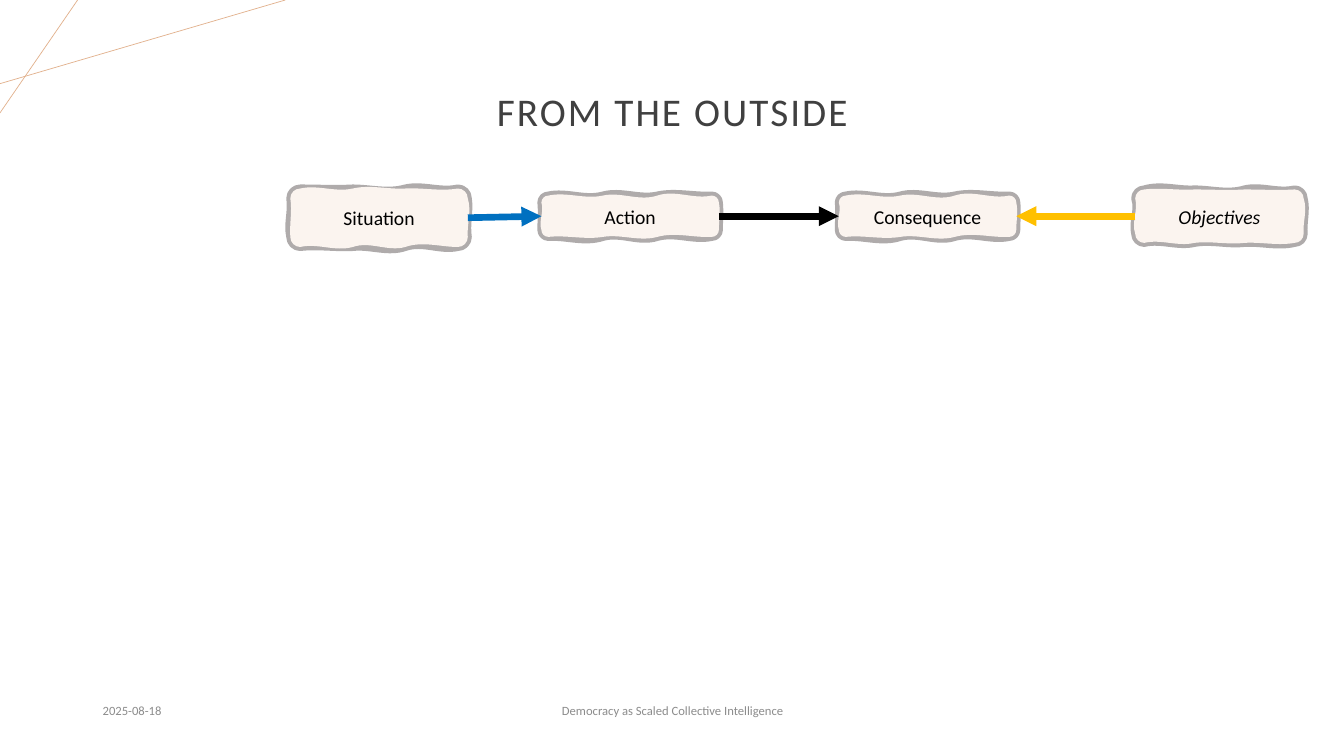
from pptx import Presentation
from pptx import util as u
from pptx.dml.color import RGBColor
from pptx.enum import shapes, text
from pptx.oxml import ns
from lxml import etree

CREAM = RGBColor(0xFB, 0xF4, 0xEF)
STONE = RGBColor(0xAF, 0xAB, 0xAB)
PEACH = RGBColor(0xE2, 0xB1, 0x8D)
BLUE = RGBColor(0x00, 0x70, 0xC0)
GOLD = RGBColor(0xFF, 0xC0, 0x00)
BLACK = RGBColor(0, 0, 0)
DARK = RGBColor(0x40, 0x40, 0x40)
GREY = RGBColor(0x8C, 0x8C, 0x8C)
FONT = "Calibri"

# Bends of the rim and the face, in hundredths of an inch: two per curve,
# three curves along the top, one right, three along the bottom, one left
TALL = ([0, 1, 0, 5, -4, 4, 2, -2, 4, -6, 6, -2, 1, -2, -3, 2],
        [-4, 4, -4, 1, -1, 3, 4, -1, 0, -6, 5, -6, 5, -4, -1, 2])
FLAT = ([-4, 5, -5, 4, -4, 1, 1, 0, 4, -5, 6, -5, 6, -1, 0, 1],
        [-4, 4, -4, 6, -6, 4, 2, 0, 1, -5, 5, -3, 3, -2, -3, 3])
GOAL = ([-5, 1, 0, 5, -4, 4, 3, -1, 4, -1, 2, -3, 4, -4, -3, 4],
        [-2, 1, 0, 1, 0, 1, 4, -1, 3, -1, 2, -2, 4, -4, -4, 3])

# Label, box, bends, italic
STEPS = [
    ("Situation", (2.88, 1.87, 1.76, 0.58), TALL, False),
    ("Action", (5.37, 1.94, 1.76, 0.41), FLAT, False),
    ("Consequence", (8.32, 1.94, 1.76, 0.41), FLAT, False),
    ("Objectives", (11.26, 1.88, 1.67, 0.53), GOAL, True),
]


def inches(*sizes):
    return [u.Inches(s) for s in sizes]


def write(frame, words, size, color, align, italic=None):
    frame.word_wrap = True
    frame.vertical_anchor = text.MSO_ANCHOR.MIDDLE
    para = frame.paragraphs[0]
    para.alignment = align
    run = para.add_run()
    run.text = words
    run.font.name = FONT
    run.font.size = u.Pt(size)
    run.font.italic = italic
    run.font.color.rgb = color
    return para, run


def label(slide, box, *look):
    return write(slide.shapes.add_textbox(*inches(*box)).text_frame, *look)


def line(slide, start, end, color, width, arrow=False):
    link = slide.shapes.add_connector(
        shapes.MSO_CONNECTOR.STRAIGHT, *inches(*start, *end))
    link.line.color.rgb = color
    link.line.width = u.Pt(width)
    if arrow:
        etree.SubElement(link.line._get_or_add_ln(), ns.qn("a:tailEnd"),
                         type="triangle")
    etree.SubElement(link._element.spPr, ns.qn("a:effectLst"))


def curves(w, h, bends):
    """Return the start and the cubic curves of a wavy rounded box."""
    r = 0.17 * h
    third = (w - 2 * r) / 3
    stops = [r + third * i for i in range(4)]
    top = [(x, 0) for x in stops]
    base = [(x, h) for x in reversed(stops)]
    knots = [(0, r), *top, (w, r), (w, h - r), *base, (0, h - r), (0, r)]
    bend = iter(bends)
    result = []
    for (x1, y1), (x2, y2) in zip(knots, knots[1:]):
        dx, dy = x2 - x1, y2 - y1
        if dx and dy:  # rounded corner
            tip = (x1, y2) if x1 in (0, w) else (x2, y1)
            ends = [tuple(k + 0.55 * (t - k) for k, t in zip(knot, tip))
                    for knot in ((x1, y1), (x2, y2))]
        else:  # wavy side
            ends = []
            for part in (1 / 3, 2 / 3):
                off = next(bend) / 100
                ends.append((x1 + dx * part + (off if dy else 0),
                             y1 + dy * part + (off if dx else 0)))
        result.append((*ends, (x2, y2)))
    return knots[0], result


def add_point(parent, point):
    x, y = inches(*point)
    etree.SubElement(parent, ns.qn("a:pt"), x=str(x), y=str(y))


def wavy(slide, box, bends, words, italic):
    left, top, w, h = box
    pen = slide.shapes.build_freeform(*inches(left, top), scale=1.0)
    pen.add_line_segments([inches(left + w, top), inches(left + w, top + h),
                           inches(left, top + h)])
    shape = pen.convert_to_shape()
    shape.shadow.inherit = False
    shape.fill.solid()
    shape.fill.fore_color.rgb = CREAM
    shape.line.color.rgb = STONE
    shape.line.width = u.Pt(5.75)

    # A stroked rim below a filled face
    paths = shape._element.spPr.find(".//" + ns.qn("a:pathLst"))
    paths.clear()
    for wave, off in zip(bends, ({"fill": "none"}, {"stroke": "0"})):
        track = etree.SubElement(paths, ns.qn("a:path"), w=str(u.Inches(w)),
                                 h=str(u.Inches(h)), **off)
        start, arcs = curves(w, h, wave)
        add_point(etree.SubElement(track, ns.qn("a:moveTo")), start)
        for arc in arcs:
            cubic = etree.SubElement(track, ns.qn("a:cubicBezTo"))
            for point in arc:
                add_point(cubic, point)
        etree.SubElement(track, ns.qn("a:close"))
    write(shape.text_frame, words, 14, BLACK, text.PP_ALIGN.CENTER, italic)


def corner(slide):
    line(slide, (0, 0.83), (2.83, 0), PEACH, 0.5)
    line(slide, (0.77, 0), (0, 1.12), PEACH, 0.5)


def title(slide, box):
    para, run = label(slide, box, "FROM THE OUTSIDE", 28, DARK,
                      text.PP_ALIGN.CENTER)
    para.line_spacing = 0.9
    run.font._element.set("spc", "150")


def chain(slide, steps):
    for words, box, bends, italic in steps:
        wavy(slide, box, bends, words, italic)
    # Arrows between neighbours; the last one points back
    boxes = [step[1] for step in steps]
    for (x1, y1, w1, h1), (x2, y2, _, h2), color in zip(
            boxes, boxes[1:], (BLUE, BLACK, GOLD)):
        ends = [(x1 + w1, y1 + h1 / 2), (x2, y2 + h2 / 2)]
        if color == GOLD:
            ends.reverse()
        line(slide, *ends, color, 4.75, arrow=True)


def footer(slide, top, high):
    label(slide, (0.92, top, 3, high), "2025-08-18", 9, GREY,
          text.PP_ALIGN.LEFT)
    label(slide, (4.42, top, 4.5, high),
          "Democracy as Scaled Collective Intelligence", 9, GREY,
          text.PP_ALIGN.CENTER)


def main():
    deck = Presentation()
    deck.slide_width, deck.slide_height = inches(13.33, 7.5)
    slide = deck.slides.add_slide(deck.slide_layouts[6])
    corner(slide)
    title(slide, (0.92, 0.4, 11.5, 1.45))
    chain(slide, STEPS)
    footer(slide, 6.85, 0.4)
    deck.save("out.pptx")


if __name__ == "__main__":
    main()
